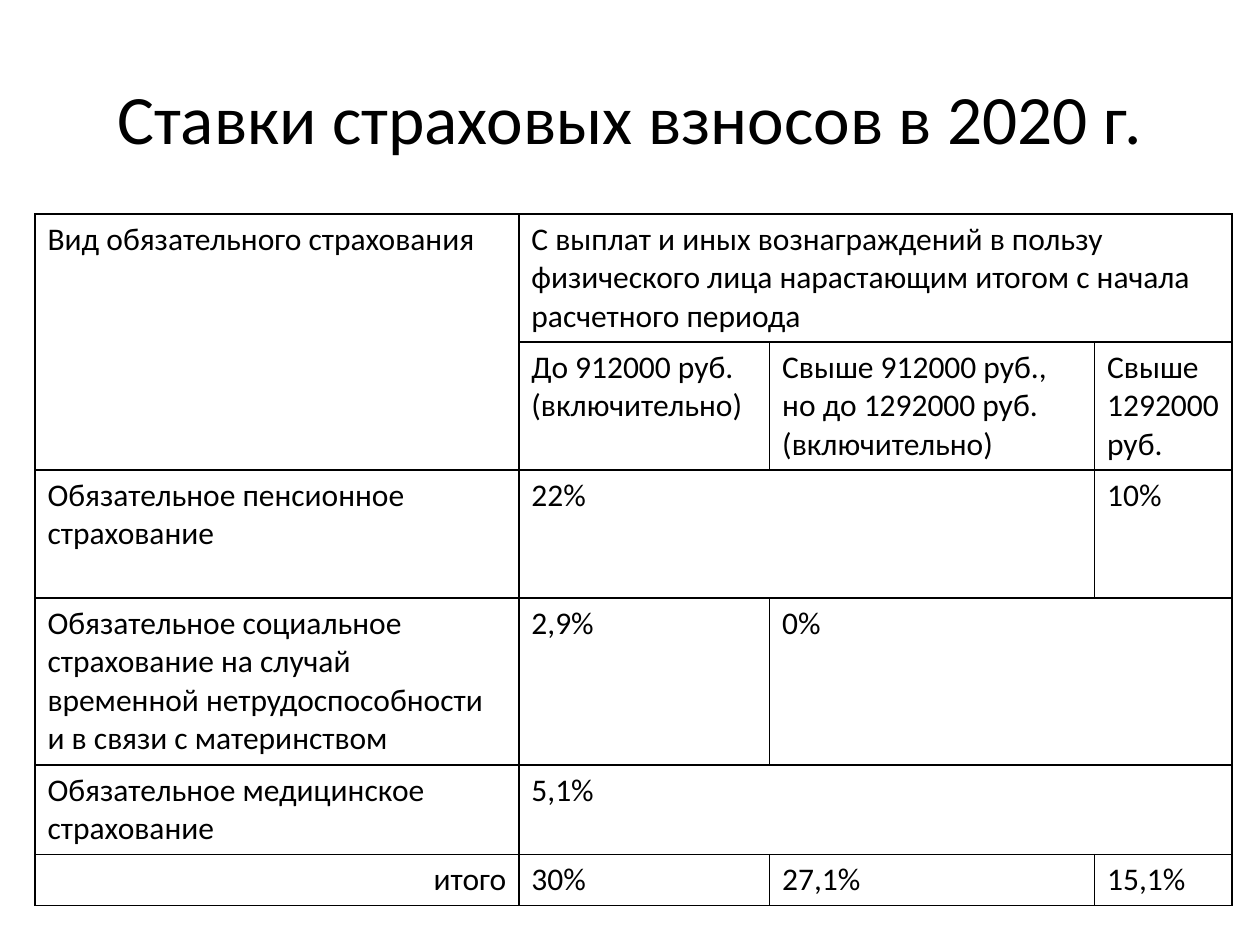
from dataclasses import dataclass

from lxml import etree
from pptx import Presentation
from pptx.dml.color import RGBColor
from pptx.enum import text
from pptx.oxml import ns
from pptx.util import Pt


@dataclass(frozen=True)
class Theme:
    font: str = "Calibri"
    ink: str = "000000"
    title_size: float = 39.6
    table_size: float = 18
    border_width: float = 1


THEME = Theme()

COLUMN_WIDTHS = [276.5, 143.3, 185.7, 78.5]
ROW_HEIGHTS = [73.1, 73.1, 73.1, 95.4, 50.9, 29.1]

# (row, column, rows spanned, columns spanned, wording)
RATES = [
    (0, 0, 2, 1, "Вид обязательного страхования"),
    (0, 1, 1, 3, "С выплат и иных вознаграждений в пользу физического лица "
                 "нарастающим итогом с начала расчетного периода"),
    (1, 1, 1, 1, "До 912000 руб. (включительно)"),
    (1, 2, 1, 1, "Свыше 912000 руб., но до 1292000 руб. (включительно)"),
    (1, 3, 1, 1, "Свыше 1292000 руб."),
    (2, 0, 1, 1, "Обязательное пенсионное страхование"),
    (2, 1, 1, 2, "22%"),
    (2, 3, 1, 1, "10%"),
    (3, 0, 1, 1, "Обязательное социальное страхование на случай временной "
                 "нетрудоспособности и в связи с материнством"),
    (3, 1, 1, 1, "2,9%"),
    (3, 2, 1, 2, "0%"),
    (4, 0, 1, 1, "Обязательное медицинское страхование"),
    (4, 1, 1, 3, "5,1%"),
    (5, 0, 1, 1, "итого"),
    (5, 1, 1, 1, "30%"),
    (5, 2, 1, 1, "27,1%"),
    (5, 3, 1, 1, "15,1%"),
]


def write(text_frame, wording, size, alignment):
    text_frame.text = wording
    paragraph = text_frame.paragraphs[0]
    paragraph.alignment = alignment
    font = paragraph.runs[0].font
    font.name = THEME.font
    font.size = Pt(size)
    font.color.rgb = RGBColor.from_string(THEME.ink)


def add_title(slide, wording):
    title = slide.shapes.title
    title.left, title.top, title.width, title.height = Pt(36), Pt(21.6), Pt(648), Pt(90)
    title.text_frame.vertical_anchor = text.MSO_ANCHOR.MIDDLE
    write(title.text_frame, wording, THEME.title_size, text.PP_ALIGN.CENTER)


def format_cell(cell):
    """Clear the fill and rule all four sides."""
    cell.fill.background()
    properties = cell._tc.get_or_add_tcPr()
    for position, side in enumerate(("lnL", "lnR", "lnT", "lnB")):
        line = etree.Element(ns.qn(f"a:{side}"), w=str(Pt(THEME.border_width)))
        fill = etree.SubElement(line, ns.qn("a:solidFill"))
        etree.SubElement(fill, ns.qn("a:srgbClr"), val=THEME.ink)
        properties.insert(position, line)


def add_rates_table(slide):
    frame = slide.shapes.add_table(
        len(ROW_HEIGHTS), len(COLUMN_WIDTHS), Pt(20), Pt(122.4),
        Pt(sum(COLUMN_WIDTHS)), Pt(sum(ROW_HEIGHTS)))
    table = frame.table
    table.first_row = table.horz_banding = False
    for column, width in zip(table.columns, COLUMN_WIDTHS):
        column.width = Pt(width)
    for row, height in zip(table.rows, ROW_HEIGHTS):
        row.height = Pt(height)
    for cell in table.iter_cells():
        format_cell(cell)

    # Wording and merged cells
    for row, column, row_span, column_span, wording in RATES:
        cell = table.cell(row, column)
        if row_span * column_span > 1:
            cell.merge(table.cell(row + row_span - 1, column + column_span - 1))
        is_total_label = (row, column) == (len(ROW_HEIGHTS) - 1, 0)
        alignment = text.PP_ALIGN.RIGHT if is_total_label else text.PP_ALIGN.LEFT
        write(cell.text_frame, wording, THEME.table_size, alignment)


def main():
    presentation = Presentation()
    presentation.slide_width, presentation.slide_height = Pt(720), Pt(540)
    slide = presentation.slides.add_slide(presentation.slide_layouts[5])
    add_title(slide, "Ставки страховых взносов в 2020 г.")
    add_rates_table(slide)
    presentation.save("out.pptx")


if __name__ == "__main__":
    main()
